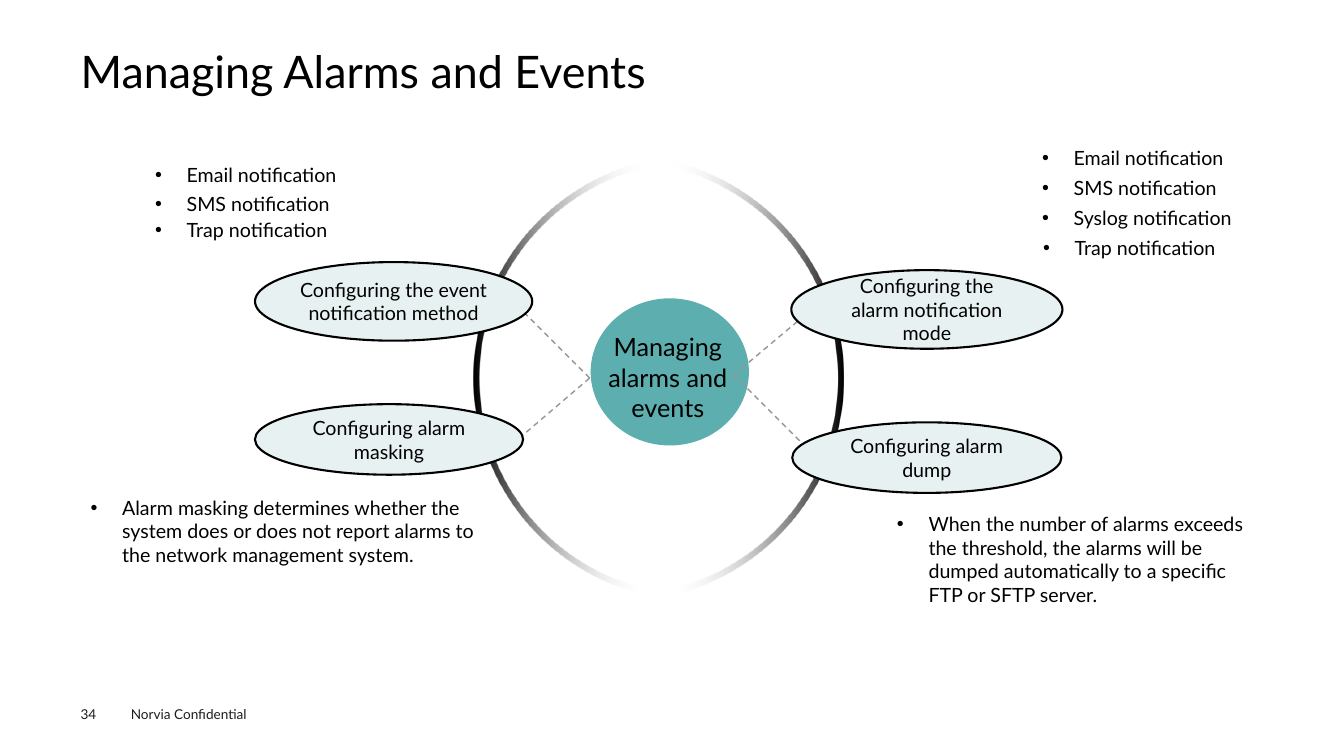
"""Build the alarm and event management slide: a hub, two arcs and four topics."""
from pptx import Presentation
from pptx.dml.color import RGBColor
from pptx.enum.dml import MSO_LINE_DASH_STYLE as Dash
from pptx.enum.shapes import MSO_CONNECTOR as Connector, MSO_SHAPE as Shape
from pptx.enum.text import MSO_ANCHOR as Anchor, PP_ALIGN as Align
from pptx.oxml.ns import qn
from pptx.util import Inches, Pt

FONT = "Lato"
CELL = Inches(0.1)
rgb = RGBColor.from_string


def cells(*counts):
    """Turn grid counts into lengths."""
    return [round(count * CELL) for count in counts]


def write(holder, text, size=14, color="000000", align=Align.LEFT, anchor=Anchor.TOP,
          margins=(1, 0.5), bullet=False, spacing=None):
    """Fill a shape with one formatted paragraph."""
    frame = holder.text_frame
    frame.word_wrap = True
    frame.vertical_anchor = anchor
    frame.margin_left = frame.margin_right = cells(margins[0])[0]
    frame.margin_top = frame.margin_bottom = cells(margins[1])[0]
    paragraph = frame.paragraphs[0]
    if bullet:
        properties = paragraph._p.get_or_add_pPr()
        indent = cells(3.13)[0]
        properties.set("marL", str(indent))
        properties.set("indent", str(-indent))
        properties.append(properties.makeelement(qn("a:buFont"), {"typeface": "Arial"}))
        properties.append(properties.makeelement(qn("a:buChar"), {"char": "•"}))
    paragraph.alignment = align
    paragraph.line_spacing = spacing
    run = paragraph.add_run()
    run.text = text
    run.font.name = FONT
    run.font.size = Pt(size)
    run.font.color.rgb = rgb(color)


deck = Presentation()
deck.slide_width, deck.slide_height = cells(133.33, 75)
slide = deck.slides.add_slide(deck.slide_layouts[5])
shapes = slide.shapes

title = shapes.title
title.left, title.top, title.width, title.height = cells(8, 4.9, 117.3, 5.4)
write(title, "Managing Alarms and Events", size=32, margins=(0, 0), spacing=0.9)

footer = shapes.add_textbox(*cells(12, 69.5, 16, 2.7))
write(footer, "Norvia Confidential", size=9.7, color="1D1D1B")
page_number = shapes.add_textbox(*cells(8, 70, 5.5, 1.6))
write(page_number, "34", size=9.7, color="1D1D1B", margins=(0, 0))

hub = shapes.add_shape(Shape.OVAL, *cells(58.6, 29.6, 15.7, 14.6))
hub.shadow.inherit = False
hub.fill.solid()
hub.fill.fore_color.rgb = rgb("5DAEAE")
hub.line.fill.background()

RING = 44.2
THICKNESS = 0.6
for ring_left, turn in ((39.5, 90), (47, 270)):
    arc = shapes.add_shape(Shape.BLOCK_ARC, *cells(ring_left, 15.4, RING, RING))
    arc.rotation = turn
    arc.adjustments[2] = THICKNESS / RING
    arc.shadow.inherit = False
    arc.line.fill.background()
    arc.fill.gradient()
    arc.fill.gradient_angle = 270
    for stop, position, color in zip(arc.fill.gradient_stops, (0, 0.39), ("000000", "FFFFFF")):
        stop.position = position
        stop.color.rgb = rgb(color)
    clear = arc._element.findall(".//" + qn("a:srgbClr"))[-1]
    clear.append(clear.makeelement(qn("a:alpha"), {"val": "0"}))

spokes = (
    (72.8, 37.2, 80.4, 30.8),
    (72.8, 37.2, 80.4, 44.8),
    (58.5, 37.5, 50.9, 44),
    (58.5, 37.5, 50.9, 29.9),
)
for ends in spokes:
    spoke = shapes.add_connector(Connector.STRAIGHT, *cells(*ends))
    spoke.line.color.rgb = rgb("969696")
    spoke.line.width = Pt(1)
    spoke.line.dash_style = Dash.DASH
    drawing = spoke._element.spPr
    drawing.append(drawing.makeelement(qn("a:effectLst"), {}))

hub_label = shapes.add_textbox(*cells(57, 32.4, 18.5, 13.1))
write(hub_label, "Managing alarms and events", size=18, align=Align.CENTER)

topics = (
    ("Configuring the event notification method", (25.3, 26, 27.5, 7.8)),
    ("Configuring alarm dump", (78.6, 41.9, 26.7, 7)),
    ("Configuring alarm masking", (25.3, 40.1, 26.6, 7)),
    ("Configuring the alarm notification mode", (78.5, 26.8, 26.9, 7.8)),
)
for name, place in topics:
    topic = shapes.add_shape(Shape.OVAL, *cells(*place))
    topic.shadow.inherit = False
    topic.fill.solid()
    topic.fill.fore_color.rgb = rgb("E8F1F1")
    topic.line.color.rgb = rgb("000000")
    topic.line.width = Pt(1.5)
    write(topic, name, align=Align.CENTER, anchor=Anchor.MIDDLE, margins=(0.4, 0.5))

details = (
    ("Email notification", (102.4, 14, 25.4, 4)),
    ("SMS notification", (102.4, 17, 24.1, 4)),
    ("Syslog notification", (102.4, 19.9, 26.3, 4)),
    ("Trap notification", (102.5, 22.9, 24.2, 4)),
    ("Email notification", (14.4, 15.7, 25.4, 4)),
    ("SMS notification", (14.4, 18.6, 24.1, 4)),
    ("Trap notification", (14.4, 21.1, 24.2, 4)),
    ("When the number of alarms exceeds the threshold, the alarms will be dumped "
     "automatically to a specific FTP or SFTP server.", (88, 50.3, 38.5, 23.7)),
    ("Alarm masking determines whether the system does or does not report alarms "
     "to the network management system.", (8, 48.7, 40.3, 28.3)),
)
for point, place in details:
    detail = shapes.add_textbox(*cells(*place))
    write(detail, point, bullet=True)

deck.save("out.pptx")
